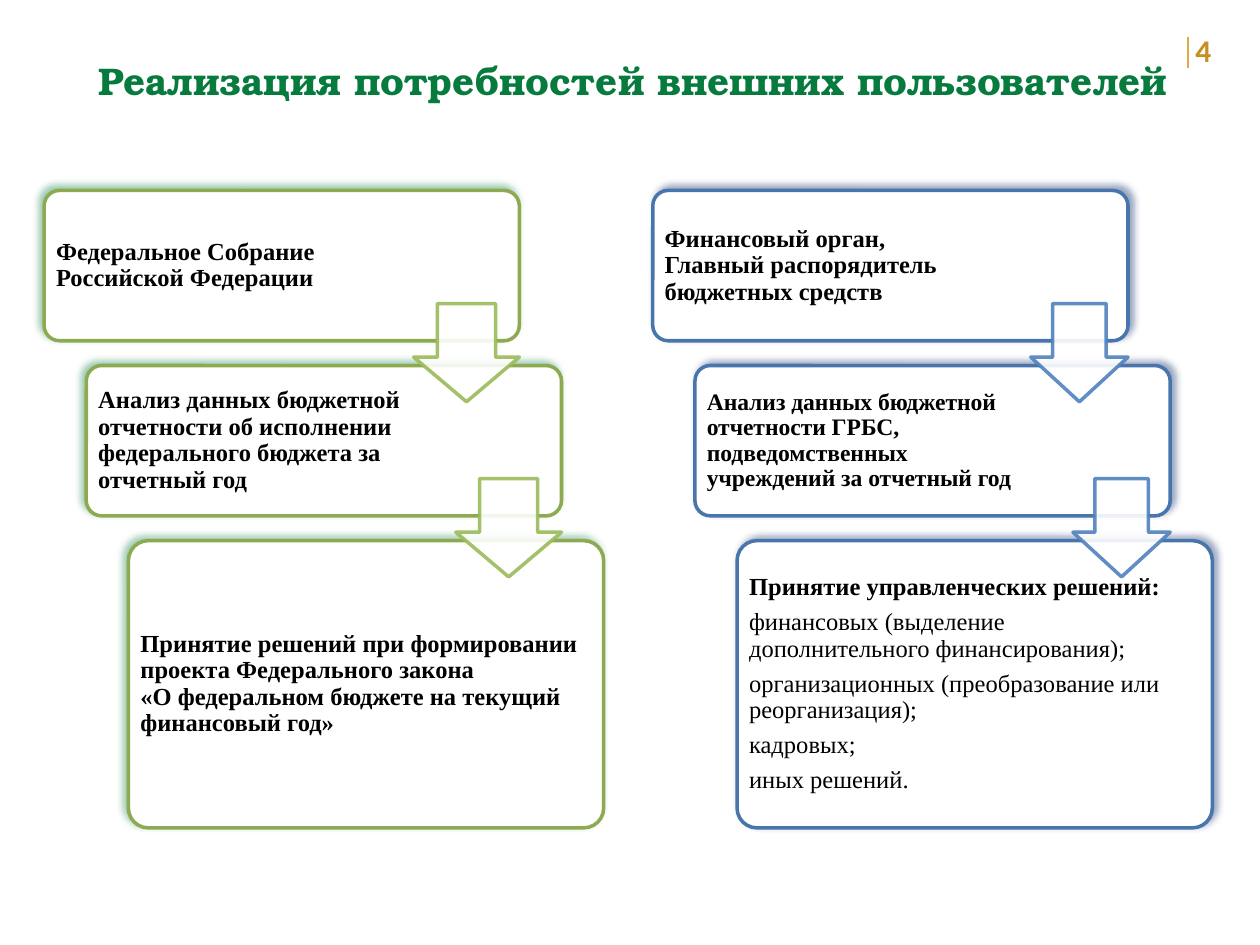
from lxml import etree
from pptx import Presentation
from pptx.dml import color
from pptx.enum import shapes, text
from pptx.oxml import ns
from pptx.util import Cm, Pt

SERIF = "Times New Roman"
RADII = (0.31, 0.31, 0.4)


def rgb(code):
    return color.RGBColor.from_string(code)


def sub(parent, tag, **attrs):
    node = etree.SubElement(parent, ns.qn(tag))
    for key, val in attrs.items():
        node.set(key, str(val))
    return node


def style(par, name, size, hue, bold=True):
    font = par.font
    font.name, font.size, font.bold = name, Pt(size), bold
    font.color.rgb = rgb(hue)


def paint(shape, line):
    shape.shadow.inherit = False
    shape.fill.solid()
    shape.fill.fore_color.rgb = rgb("FFFFFF")
    shape.line.color.rgb = rgb(line)
    shape.line.width = Pt(2)


def glow(shape, hue, angle):
    """Give the shape a soft outer shadow."""
    effects = shape._element.spPr.find(ns.qn("a:effectLst"))
    outer = sub(effects, "a:outerShdw", blurRad=Pt(4), dist=Pt(3),
                dir=angle * 60000, algn="ctr", rotWithShape=0)
    sub(sub(outer, "a:srgbClr", val=hue), "a:alpha", val=40000)


def head(slide, x, y, w, h):
    title = slide.shapes.title
    title.left, title.top, title.width, title.height = map(Cm, (x, y, w, h))
    frame = title.text_frame
    frame.margin_left, frame.margin_right = Cm(0.3), Cm(0.15)
    frame.vertical_anchor = text.MSO_ANCHOR.MIDDLE
    par = frame.paragraphs[0]
    par.text = "Реализация потребностей внешних пользователей"
    par.alignment = text.PP_ALIGN.CENTER
    style(par, "TeX Gyre Bonum", 22, "077A3E")


def page(slide, x, y, w, h):
    """Place the page number and the rule on its left."""
    note = slide.shapes.add_textbox(Cm(x), Cm(y), Cm(w), Cm(h))
    par = note.text_frame.paragraphs[0]
    par.text = "4"
    style(par, "Calibri", 18, "C79023")
    rule = slide.shapes.add_connector(
        shapes.MSO_CONNECTOR.STRAIGHT,
        Cm(x + 0.1), Cm(y + 0.23), Cm(x + 0.1), Cm(y + 0.86))
    rule.line.color.rgb = rgb("DEAA46")
    rule.line.width = Pt(1)
    sub(rule._element.spPr, "a:effectLst")


def card(group, x, y, w, h, radius, lines, size, right, look):
    box = group.shapes.add_shape(shapes.MSO_SHAPE.ROUNDED_RECTANGLE,
                                 Cm(x), Cm(y), Cm(w), Cm(h))
    box.adjustments[0] = radius / h
    paint(box, look["edge"])
    glow(box, look["shade"], look["angle"])
    frame = box.text_frame
    frame.word_wrap = True
    frame.vertical_anchor = text.MSO_ANCHOR.MIDDLE
    corner = 0.29 * radius
    frame.margin_left, frame.margin_right = Cm(0.24 - corner), Cm(right - corner)
    frame.margin_top = frame.margin_bottom = Cm(0.1)
    for i, line in enumerate(lines):
        par = frame.add_paragraph() if i else frame.paragraphs[0]
        par.text = line
        par.alignment = text.PP_ALIGN.LEFT
        par.line_spacing = 0.9
        par.space_after = Pt(4.9)
        style(par, SERIF, size, "000000", bold=i == 0)


def arrow(group, x, y, w, h, hue):
    down = group.shapes.add_shape(shapes.MSO_SHAPE.DOWN_ARROW,
                                  Cm(x), Cm(y), Cm(w), Cm(h))
    down.adjustments[0] = 0.55
    down.adjustments[1] = 0.9 / min(w, h)
    paint(down, hue)
    for tone in down._element.spPr.iter(ns.qn("a:srgbClr")):
        sub(tone, "a:alpha", val=90000)


def stairs(slide, x, y, w, cards, look):
    """Stack three cards, each set further right, with arrows between."""
    group = slide.shapes.add_group_shape()
    spots = [(x + 0.85 * i, y + 3.53 * i) for i in range(len(cards))]
    for (left, top), h, radius, (lines, size, right) in zip(
            spots, (3.03, 3.03, 5.79), RADII, cards):
        card(group, left, top, w, h, radius, lines, size, right, look)
    wide = look["wide"]
    for left, top in spots[:-1]:
        arrow(group, left + w - wide, top + 2.28, wide, 1.98, look["arrow"])


GREEN = dict(edge="8DAA51", arrow="9BBB59", shade="077A3E", angle=225, wide=2.13)
BLUE = dict(edge="4875AC", arrow="4F81BD", shade="002060", angle=315, wide=1.96)

# Each card: paragraphs, text size, right inset
LAW = [
    (["Федеральное Собрание Российской Федерации"], 14, 3.58),
    (["Анализ данных бюджетной отчетности об исполнении федерального "
      "бюджета за отчетный год"], 14, 3.23),
    (["Принятие решений при формировании проекта Федерального закона\n"
      "«О федеральном бюджете на текущий финансовый год»"], 14, 0.5),
]
FUNDS = [
    (["Финансовый орган, Главный распорядитель бюджетных средств"], 14, 3.33),
    (["Анализ данных бюджетной отчетности ГРБС, подведомственных "
      "учреждений за отчетный год"], 13.5, 3.05),
    (["Принятие управленческих решений:",
      "финансовых (выделение дополнительного финансирования);",
      "организационных (преобразование или реорганизация);",
      "кадровых;",
      "иных решений."], 14, 0.99),
]


def main():
    deck = Presentation()
    deck.slide_width, deck.slide_height = Cm(25.4), Cm(19.05)
    slide = deck.slides.add_slide(deck.slide_layouts[5])
    head(slide, 1.52, 1.02, 22.33, 1.19)
    page(slide, 23.85, 0.51, 1.55, 1.02)
    stairs(slide, 0.89, 3.84, 9.58, LAW, GREEN)
    stairs(slide, 13.16, 3.84, 9.58, FUNDS, BLUE)
    deck.save("out.pptx")


if __name__ == "__main__":
    main()
